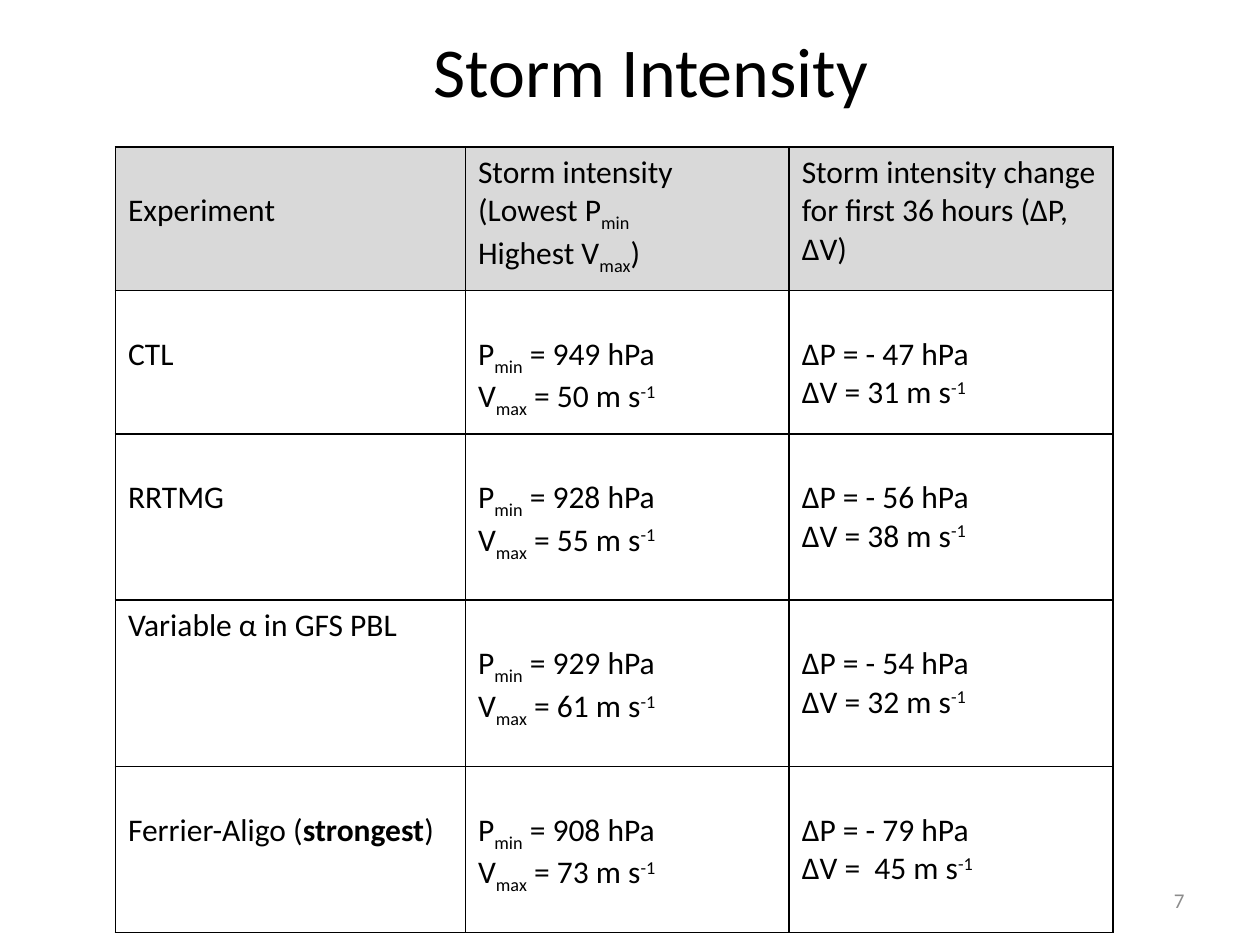
from dataclasses import dataclass
from typing import NamedTuple

from lxml import etree
from pptx import Presentation
from pptx.dml.color import RGBColor
from pptx.enum import text
from pptx.oxml import ns
from pptx.util import Pt


@dataclass(frozen=True)
class Theme:
    font: str = "Calibri"
    ink: str = "000000"
    muted: str = "8C8C8C"
    header: str = "D9D9D9"
    title_size: int = 40
    body_size: int = 18
    number_size: int = 12
    border: int = 1
    line_height: int = 22


class Span(NamedTuple):
    words: str
    baseline: int = 0  # percent of the type size; negative is subscript
    bold: bool = False


class Experiment(NamedTuple):
    label: list[Span]
    pressure: int
    wind: int
    pressure_drop: int
    wind_rise: str
    height: int
    label_lowered: bool = True


class Label(NamedTuple):
    words: str
    frame: tuple[float, float, float, float]
    size: int
    color: str
    align: text.PP_ALIGN
    anchor: text.MSO_ANCHOR


Lines = list[list[Span]]

THEME = Theme()
MIN, MAX, PER = Span("min", -25), Span("max", -25), Span("-1", 30)
COLUMNS = (200, 185, 185)
HEADER_HEIGHT = 82
TABLE_LEFT, TABLE_TOP = 66, 84

HEADER: list[Lines] = [
    [[Span("Experiment")]],
    [[Span("Storm intensity")],
     [Span("(Lowest P"), MIN],
     [Span("Highest V"), MAX, Span(")")]],
    [[Span("Storm intensity change for first 36 hours (ΔP, ΔV)")]],
]

EXPERIMENTS = [
    Experiment([Span("CTL")], 949, 50, 47, "31", 82),
    Experiment([Span("RRTMG")], 928, 55, 56, "38", 95),
    Experiment([Span("Variable α in GFS PBL")], 929, 61, 54, "32", 95, False),
    Experiment([Span("Ferrier-Aligo ("), Span("strongest", bold=True), Span(")")],
               908, 73, 79, " 45", 95),
]

LABELS = [
    Label("Storm Intensity", (66, 12, 612, 78), THEME.title_size, THEME.ink,
          text.PP_ALIGN.CENTER, text.MSO_ANCHOR.TOP),
    Label("7", (516, 500, 168, 29), THEME.number_size, THEME.muted,
          text.PP_ALIGN.RIGHT, text.MSO_ANCHOR.MIDDLE),
]


def set_all(target, values: dict) -> None:
    for name, value in values.items():
        setattr(target, name, value)


def add_span(para, span: Span, size: int, color: str) -> None:
    run = para.add_run()
    run.text = span.words
    set_all(run.font, {"name": THEME.font, "size": Pt(size), "bold": span.bold})
    run.font.color.rgb = RGBColor.from_string(color)
    if span.baseline:
        run.font._element.set("baseline", str(span.baseline * 1000))


def add_borders(cell) -> None:
    properties = cell._tc.get_or_add_tcPr()
    for side in ("lnL", "lnR", "lnT", "lnB"):
        line = etree.SubElement(properties, ns.qn(f"a:{side}"), w=str(Pt(THEME.border)))
        fill = etree.SubElement(line, ns.qn("a:solidFill"))
        etree.SubElement(fill, ns.qn("a:srgbClr"), val=THEME.ink)


def fill_cell(cell, lines: Lines, lowered: bool, color: str | None = None) -> None:
    """Write the lines, starting one line further down when lowered."""
    add_borders(cell)
    if color:
        cell.fill.solid()
        cell.fill.fore_color.rgb = RGBColor.from_string(color)
    else:
        cell.fill.background()
    drop = THEME.line_height if lowered else 0
    set_all(cell, {"margin_left": Pt(7.2), "margin_right": Pt(7.2),
                   "margin_top": Pt(3.6 + drop), "margin_bottom": Pt(3.6)})
    frame = cell.text_frame
    for index, line in enumerate(lines):
        para = frame.add_paragraph() if index else frame.paragraphs[0]
        for span in line:
            add_span(para, span, THEME.body_size, THEME.ink)


def experiment_cells(item: Experiment) -> list[Lines]:
    return [
        [item.label],
        [[Span("P"), MIN, Span(f" = {item.pressure} hPa")],
         [Span("V"), MAX, Span(f" = {item.wind} m s"), PER]],
        [[Span(f"ΔP = - {item.pressure_drop} hPa")],
         [Span(f"ΔV = {item.wind_rise} m s"), PER]],
    ]


def add_intensity_table(page) -> None:
    heights = [HEADER_HEIGHT] + [item.height for item in EXPERIMENTS]
    table = page.shapes.add_table(
        len(heights), len(COLUMNS), Pt(TABLE_LEFT), Pt(TABLE_TOP),
        Pt(sum(COLUMNS)), Pt(sum(heights))).table
    set_all(table, {"first_row": False, "horz_banding": False})
    for column, width in zip(table.columns, COLUMNS):
        column.width = Pt(width)
    for row, height in zip(table.rows, heights):
        row.height = Pt(height)
    for column, lines in enumerate(HEADER):
        fill_cell(table.cell(0, column), lines, column == 0, THEME.header)
    for row, item in enumerate(EXPERIMENTS, start=1):
        for column, lines in enumerate(experiment_cells(item)):
            lowered = column > 0 or item.label_lowered
            fill_cell(table.cell(row, column), lines, lowered)


def add_label(page, label: Label) -> None:
    box = page.shapes.add_textbox(*(Pt(length) for length in label.frame))
    set_all(box.text_frame, {"word_wrap": True, "vertical_anchor": label.anchor})
    para = box.text_frame.paragraphs[0]
    para.alignment = label.align
    add_span(para, Span(label.words), label.size, label.color)


def main() -> None:
    deck = Presentation()
    set_all(deck, {"slide_width": Pt(720), "slide_height": Pt(540)})
    page = deck.slides.add_slide(deck.slide_layouts[6])
    add_intensity_table(page)
    for label in LABELS:
        add_label(page, label)
    deck.save("out.pptx")


if __name__ == "__main__":
    main()
